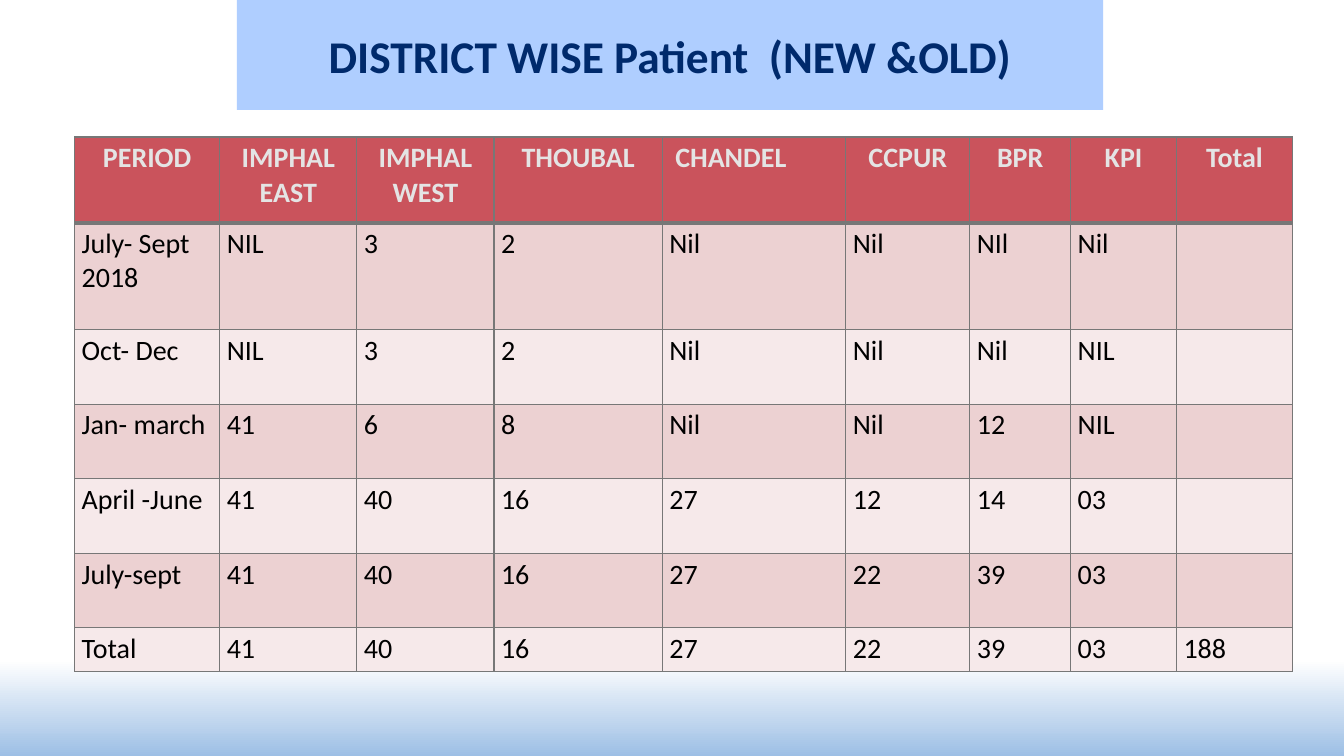
"""Build the slide with the district wise patient table."""
from dataclasses import dataclass

from lxml.etree import SubElement
from pptx import Presentation
from pptx.dml.color import RGBColor
from pptx.enum.shapes import MSO_SHAPE
from pptx.enum.text import MSO_ANCHOR, PP_ALIGN
from pptx.oxml.ns import qn
from pptx.slide import Slide
from pptx.table import _Cell
from pptx.text.text import _Paragraph
from pptx.util import Inches, Pt


@dataclass(frozen=True)
class Theme:
    font: str = "Calibri"
    navy: str = "002A6C"
    sky: str = "AFCEFF"
    white: str = "FFFFFF"
    blue: str = "9DBFE5"
    red: str = "CA535C"
    pale: str = "E4E4E4"
    ink: str = "000000"
    rule: str = "777777"
    bands: tuple[str, str] = ("F6E9EA", "ECD1D2")
    title: float = 32.4
    body: float = 20
    thin: float = 1
    thick: float = 3


@dataclass(frozen=True)
class Column:
    head: str
    width: float
    pad: float = 0.07


@dataclass(frozen=True)
class Period:
    height: float
    counts: tuple[str, ...]


THEME = Theme()
INSETS = {
    "margin_left": Inches(0.07),
    "margin_top": Inches(0.04),
    "margin_right": Inches(0.07),
    "margin_bottom": Inches(0.04),
}
COLUMNS = [
    Column("PERIOD", 1.44),
    Column("IMPHAL EAST", 1.36),
    Column("IMPHAL WEST", 1.36),
    Column("THOUBAL", 1.67),
    Column("CHANDEL", 1.82, 0.53),
    Column("CCPUR", 1.23),
    Column("BPR", 1),
    Column("KPI", 1.05),
    Column("Total", 1.15),
]
PERIODS = [
    Period(1.06, ("July- Sept 2018", "NIL", "3", "2", "Nil", "Nil", "NIl", "Nil", "")),
    Period(0.74, ("Oct- Dec", "NIL", "3", "2", "Nil", "Nil", "Nil", "NIL", "")),
    Period(0.74, ("Jan- march", "41", "6", "8", "Nil", "Nil", "12", "NIL", "")),
    Period(0.74, ("April -June", "41", "40", "16", "27", "12", "14", "03", "")),
    Period(0.74, ("July-sept", "41", "40", "16", "27", "22", "39", "03", "")),
    Period(0.43, ("Total", "41", "40", "16", "27", "22", "39", "03", "188")),
]
HEAD = Period(0.85, tuple(col.head for col in COLUMNS))


def apply(target: object, values: dict[str, object]) -> None:
    """Set each named attribute of the target."""
    for name, value in values.items():
        setattr(target, name, value)


def write(para: _Paragraph, text: str, size: float, color: str, bold: bool) -> None:
    """Write one formatted run."""
    run = para.add_run()
    run.text = text
    apply(run.font, {"name": THEME.font, "size": Pt(size), "bold": bold})
    run.font.color.rgb = RGBColor.from_string(color)


def border(cell: _Cell, top: float, bottom: float) -> None:
    """Draw the four borders of a cell."""
    props = cell._tc.get_or_add_tcPr()
    sides = {"L": THEME.thin, "R": THEME.thin, "T": top, "B": bottom}
    for side, width in sides.items():
        line = SubElement(props, qn(f"a:ln{side}"), w=str(Pt(width)))
        fill = SubElement(line, qn("a:solidFill"))
        SubElement(fill, qn("a:srgbClr"), val=THEME.rule)


def add_glow(slide: Slide) -> None:
    """Add the gradient at the foot of the slide."""
    glow = slide.shapes.add_shape(
        MSO_SHAPE.RECTANGLE, 0, Inches(2.75), Inches(13.33), Inches(4.75)
    )
    glow.shadow.inherit = False
    glow.line.fill.background()
    glow.fill.gradient()
    glow.fill.gradient_angle = 270
    stops = ((0.8, THEME.white), (1, THEME.blue))
    for stop, (place, color) in zip(glow.fill.gradient_stops, stops):
        stop.position = place
        stop.color.rgb = RGBColor.from_string(color)


def add_title(slide: Slide) -> None:
    """Fill and place the title."""
    title = slide.shapes.title
    apply(title, {
        "left": Inches(2.35), "top": 0,
        "width": Inches(8.59), "height": Inches(1.09),
    })
    title.fill.solid()
    title.fill.fore_color.rgb = RGBColor.from_string(THEME.sky)
    frame = title.text_frame
    apply(frame, INSETS | {"vertical_anchor": MSO_ANCHOR.MIDDLE, "word_wrap": True})
    para = frame.paragraphs[0]
    para.alignment = PP_ALIGN.CENTER
    write(para, "DISTRICT WISE Patient  (NEW &OLD)", THEME.title, THEME.navy, True)


def add_cell(cell: _Cell, text: str, row: int, col: Column) -> None:
    """Format and fill one table cell."""
    head = row == 0
    apply(cell, INSETS)
    border(
        cell,
        THEME.thick if row == 1 else THEME.thin,
        THEME.thick if head else THEME.thin,
    )
    cell.fill.solid()
    color = THEME.red if head else THEME.bands[row % 2]
    cell.fill.fore_color.rgb = RGBColor.from_string(color)
    para = cell.text_frame.paragraphs[0]
    if head:
        cell.margin_right = Inches(col.pad)
        para.alignment = PP_ALIGN.CENTER
    if text:
        write(para, text, THEME.body, THEME.pale if head else THEME.ink, head)


def add_grid(slide: Slide) -> None:
    """Add the table of patients by period and district."""
    rows = [HEAD, *PERIODS]
    table = slide.shapes.add_table(
        len(rows), len(COLUMNS), Inches(0.74), Inches(1.36),
        Inches(sum(col.width for col in COLUMNS)),
        Inches(sum(row.height for row in rows)),
    ).table
    for index, col in enumerate(COLUMNS):
        table.columns[index].width = Inches(col.width)
    for r, row in enumerate(rows):
        table.rows[r].height = Inches(row.height)
        for c, (text, col) in enumerate(zip(row.counts, COLUMNS)):
            add_cell(table.cell(r, c), text, r, col)


def main() -> None:
    """Build and save the slide."""
    deck = Presentation()
    apply(deck, {"slide_width": Inches(13.33), "slide_height": Inches(7.5)})
    slide = deck.slides.add_slide(deck.slide_layouts[5])
    add_glow(slide)
    add_title(slide)
    add_grid(slide)
    deck.save("out.pptx")


if __name__ == "__main__":
    main()
